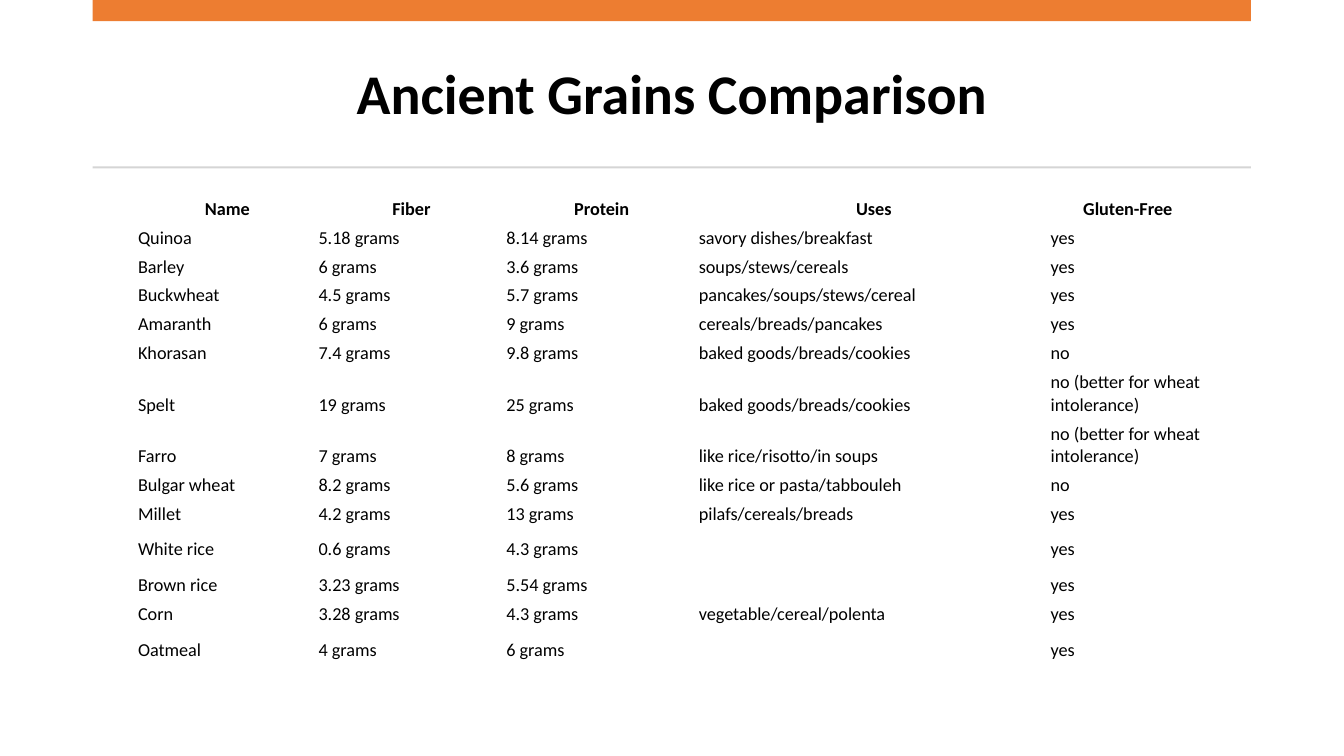
from dataclasses import dataclass

from pptx import Presentation
from pptx.dml.color import RGBColor
from pptx.enum.shapes import MSO_SHAPE
from pptx.enum.text import MSO_ANCHOR, PP_ALIGN
from pptx.util import Pt

RECTANGLE = MSO_SHAPE.RECTANGLE
MIDDLE, BOTTOM = MSO_ANCHOR.MIDDLE, MSO_ANCHOR.BOTTOM
CENTER, LEFT = PP_ALIGN.CENTER, PP_ALIGN.LEFT


@dataclass(frozen=True)
class Theme:
    font: str = "Calibri"
    ink: RGBColor = RGBColor(0x00, 0x00, 0x00)
    accent: RGBColor = RGBColor(0xED, 0x7D, 0x31)
    rule: RGBColor = RGBColor(0xD5, 0xD5, 0xD5)
    title_size: int = 40
    table_size: int = 13
    empty_size: int = 18


THEME = Theme()
MARGIN, CONTENT_WIDTH = 66.24, 827.28
COLUMN_WIDTHS = [128.9, 134.2, 137.5, 251.3, 111.6]
ROW_HEIGHT, TWO_LINE_HEIGHT, LAST_HEIGHT = 20.6, 36.8, 36

GRAINS = [
    ("Name", "Fiber", "Protein", "Uses", "Gluten-Free"),
    ("Quinoa", "5.18 grams", "8.14 grams", "savory dishes/breakfast", "yes"),
    ("Barley", "6 grams", "3.6 grams", "soups/stews/cereals", "yes"),
    ("Buckwheat", "4.5 grams", "5.7 grams", "pancakes/soups/stews/cereal", "yes"),
    ("Amaranth", "6 grams", "9 grams", "cereals/breads/pancakes", "yes"),
    ("Khorasan", "7.4 grams", "9.8 grams", "baked goods/breads/cookies", "no"),
    ("Spelt", "19 grams", "25 grams", "baked goods/breads/cookies",
     "no (better for wheat intolerance)"),
    ("Farro", "7 grams", "8 grams", "like rice/risotto/in soups",
     "no (better for wheat intolerance)"),
    ("Bulgar wheat", "8.2 grams", "5.6 grams", "like rice or pasta/tabbouleh", "no"),
    ("Millet", "4.2 grams", "13 grams", "pilafs/cereals/breads", "yes"),
    ("White rice", "0.6 grams", "4.3 grams", "", "yes"),
    ("Brown rice", "3.23 grams", "5.54 grams", "", "yes"),
    ("Corn", "3.28 grams", "4.3 grams", "vegetable/cereal/polenta", "yes"),
    ("Oatmeal", "4 grams", "6 grams", "", "yes"),
    ("", "", "", "", ""),
]


def style_paragraph(para, size, bold, align):
    para.alignment = align
    for font in [para.font] + [span.font for span in para.runs]:
        font.name = THEME.font
        font.size = Pt(size)
        font.bold = bold
        font.color.rgb = THEME.ink


deck = Presentation()
deck.slide_width, deck.slide_height = Pt(960), Pt(540)
page = deck.slides.add_slide(deck.slide_layouts[5])

# Title
title = page.shapes.title
title.left, title.top = Pt(MARGIN), Pt(26.64)
title.width, title.height = Pt(CONTENT_WIDTH), Pt(84.96)
title.text_frame.text = "Ancient Grains Comparison"
title.text_frame.vertical_anchor = MIDDLE
heading = title.text_frame.paragraphs[0]
heading.line_spacing = 0.9
style_paragraph(heading, THEME.title_size, True, CENTER)

# Top bar and the rule below the title
for top, height, color in [(0, 15.12, THEME.accent), (118.8, 1.44, THEME.rule)]:
    bar = page.shapes.add_shape(
        RECTANGLE, Pt(MARGIN), Pt(top), Pt(CONTENT_WIDTH), Pt(height))
    bar.shadow.inherit = False
    bar.fill.solid()
    bar.fill.fore_color.rgb = color
    bar.line.fill.background()

# Grain table
row_heights = [
    TWO_LINE_HEIGHT if len(grain[-1]) > 20 else ROW_HEIGHT for grain in GRAINS]
row_heights[-1] = LAST_HEIGHT
table = page.shapes.add_table(
    len(GRAINS), len(COLUMN_WIDTHS), Pt(97.92), Pt(136.8),
    Pt(sum(COLUMN_WIDTHS)), Pt(sum(row_heights))).table
table.first_row = False
table.horz_banding = False
for column, width in zip(table.columns, COLUMN_WIDTHS):
    column.width = Pt(width)

for row_index, (row, grain) in enumerate(zip(table.rows, GRAINS)):
    row.height = Pt(row_heights[row_index])
    is_header = row_index == 0
    for cell, words in zip(row.cells, grain):
        cell.fill.background()
        cell.vertical_anchor = BOTTOM
        cell.margin_left = cell.margin_right = Pt(0.72)
        cell.margin_top = Pt(0.72 if words else 3.6)
        cell.margin_bottom = Pt(0)
        cell.text_frame.text = words
        style_paragraph(
            cell.text_frame.paragraphs[0],
            THEME.table_size if words else THEME.empty_size,
            is_header, CENTER if is_header else LEFT)

deck.save("out.pptx")
